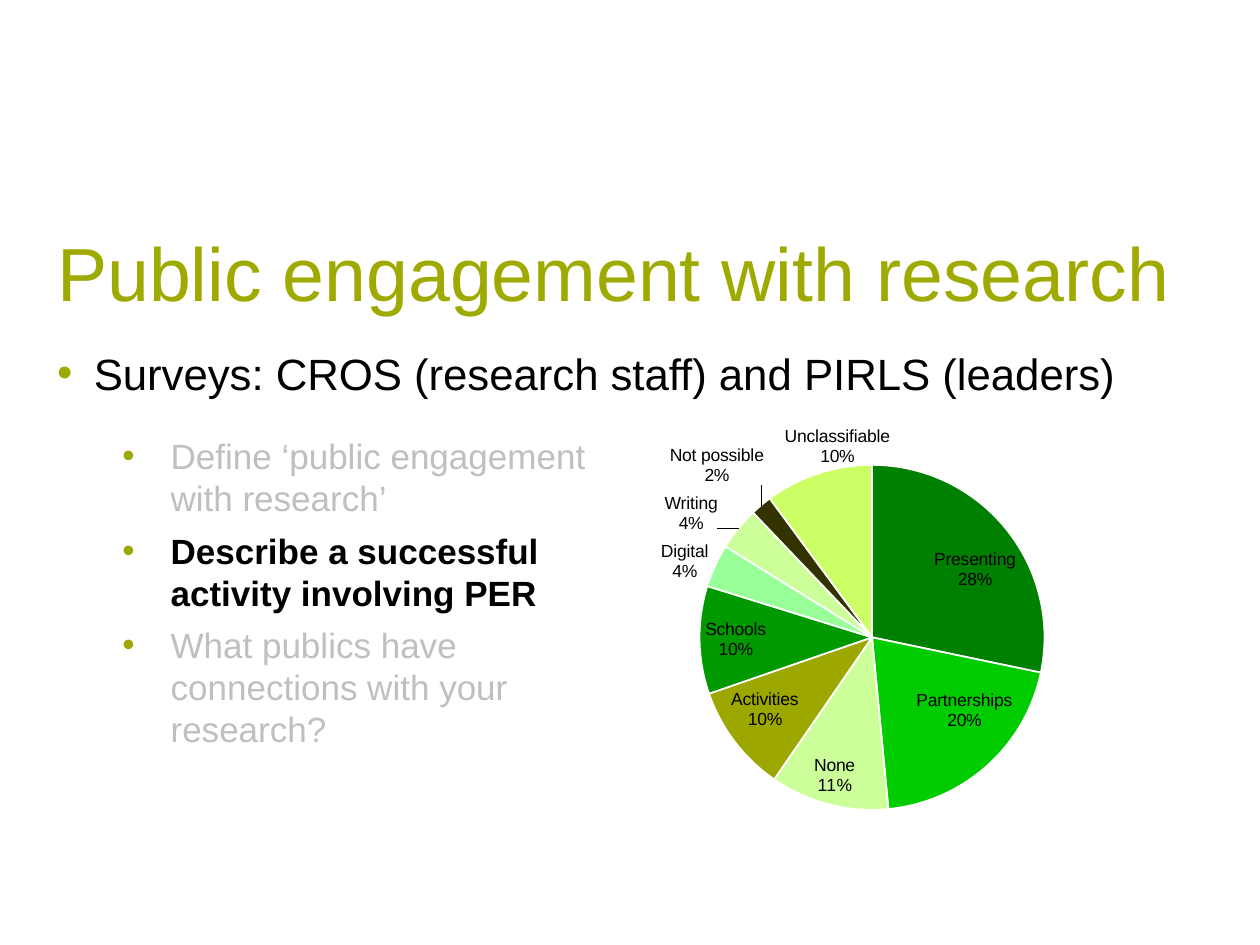
from lxml import etree
from pptx import Presentation
from pptx.chart.data import CategoryChartData
from pptx.dml.color import RGBColor
from pptx.enum.chart import XL_CHART_TYPE, XL_LABEL_POSITION
from pptx.enum.text import MSO_ANCHOR, MSO_AUTO_SIZE, PP_ALIGN
from pptx.oxml.ns import qn
from pptx.util import Cm, Pt

PIE = XL_CHART_TYPE.PIE
BEST_FIT = XL_LABEL_POSITION.BEST_FIT
OUTSIDE = XL_LABEL_POSITION.OUTSIDE_END
MIDDLE, TOP = MSO_ANCHOR.MIDDLE, MSO_ANCHOR.TOP
GROW = MSO_AUTO_SIZE.SHAPE_TO_FIT_TEXT
LEFT = PP_ALIGN.LEFT

FONT = "Arial"
OLIVE = RGBColor(0x9F, 0xAA, 0x00)
BULLET_OLIVE = RGBColor(0x9C, 0xA8, 0x00)
BLACK = RGBColor(0x00, 0x00, 0x00)
GREY = RGBColor(0xBF, 0xBF, 0xBF)
WHITE = RGBColor(0xFF, 0xFF, 0xFF)
FOREST = RGBColor(0x00, 0x80, 0x00)
GREEN = RGBColor(0x00, 0xCC, 0x00)
PALE_LIME = RGBColor(0xCC, 0xFF, 0x99)
LEAF = RGBColor(0x00, 0x99, 0x00)
MINT = RGBColor(0x99, 0xFF, 0x99)
DARK_OLIVE = RGBColor(0x33, 0x33, 0x00)
LIME = RGBColor(0xCC, 0xFF, 0x66)

PRACTICES = [
    ("Define ‘public engagement with research’", False),
    ("Describe a successful activity involving PER", True),
    ("What publics have connections with your research?", False),
]
ANSWERS = [
    ("Presenting", 28, FOREST, BEST_FIT),
    ("Partnerships", 20, GREEN, BEST_FIT),
    ("None", 11, PALE_LIME, BEST_FIT),
    ("Activities", 10, BULLET_OLIVE, BEST_FIT),
    ("Schools", 10, LEAF, BEST_FIT),
    ("Digital", 4, MINT, OUTSIDE),
    ("Writing", 4, PALE_LIME, OUTSIDE),
    ("Not possible", 2, DARK_OLIVE, OUTSIDE),
    ("Unclassifiable", 10, LIME, OUTSIDE),
]
LABEL_SHIFTS = {5: (0, 0.04), 6: (-0.02, 0.02), 7: (0.01, -0.03), 8: (0.1, 0)}


def place(shape, box):
    """Set the position and size of a shape."""
    shape.left, shape.top, shape.width, shape.height = box


def set_frame(frame, anchor):
    """Wrap the text, anchor it and let its shape grow."""
    frame.word_wrap = True
    frame.auto_size = GROW
    frame.vertical_anchor = anchor


def set_margins(frame):
    """Apply the narrow margins of the placeholders."""
    frame.margin_left = frame.margin_right = Cm(0.2)
    frame.margin_top = frame.margin_bottom = Cm(0.1)


def set_font(font, size, color, bold=False):
    """Format a font."""
    font.name, font.size, font.bold = FONT, Pt(size), bold
    font.color.rgb = color


def add_bullet(para, color, margin, hanging):
    """Give a paragraph a coloured round bullet and a hanging indent."""
    properties = para._p.get_or_add_pPr()
    properties.set("marL", str(margin))
    properties.set("indent", str(-hanging))
    bullet_color = etree.SubElement(properties, qn("a:buClr"))
    etree.SubElement(bullet_color, qn("a:srgbClr"), val=str(color))
    etree.SubElement(properties, qn("a:buFont"), typeface=FONT)
    etree.SubElement(properties, qn("a:buChar"), char="•")


def add_title(page, box):
    """Fill the title placeholder."""
    title = page.shapes.title
    place(title, box)
    frame = title.text_frame
    frame.text = "Public engagement with research"
    set_frame(frame, MIDDLE)
    set_margins(frame)
    para = frame.paragraphs[0]
    para.alignment = LEFT
    set_font(para.runs[0].font, 43, OLIVE)


def add_surveys(page, box):
    """Fill the body placeholder with the survey line."""
    body = page.placeholders[1]
    place(body, box)
    frame = body.text_frame
    frame.text = "Surveys: CROS (research staff) and PIRLS (leaders)"
    set_frame(frame, TOP)
    set_margins(frame)
    para = frame.paragraphs[0]
    para.space_before = Pt(0)
    add_bullet(para, OLIVE, Cm(0.74), Cm(0.74))
    set_font(para.runs[0].font, 25, BLACK)


def add_questions(page, box):
    """Add the list of survey questions with one emphasised."""
    frame = page.shapes.add_textbox(*box).text_frame
    set_frame(frame, TOP)
    for index, (question, current) in enumerate(PRACTICES):
        para = frame.add_paragraph() if index else frame.paragraphs[0]
        para.text = question
        para.level = 1
        para.space_after = Pt(6)
        add_bullet(para, BULLET_OLIVE, Cm(2.24), Cm(0.97))
        set_font(para.runs[0].font, 20, BLACK if current else GREY, current)


def add_layout(parent, index, values):
    """Insert a manual chart layout into a parent at a child index."""
    layout = etree.Element(qn("c:layout"))
    manual = etree.SubElement(layout, qn("c:manualLayout"))
    for name, value in values.items():
        etree.SubElement(manual, qn(f"c:{name}"), val=str(value))
    parent.insert(index, layout)


def finish_labels(chart):
    """Show name and percentage on each label and shift the crowded ones."""
    for index, label in enumerate(chart.element.iter(qn("c:dLbl"))):
        for name, value in (("Val", 0), ("CatName", 1), ("Percent", 1)):
            label.find(qn(f"c:show{name}")).set("val", str(value))
        separator = etree.SubElement(label, qn("c:separator"))
        separator.text = "\n"
        if index in LABEL_SHIFTS:
            across, down = LABEL_SHIFTS[index]
            add_layout(label, 1, {"x": across, "y": down})


def add_answers(page, box):
    """Add the pie chart of answers."""
    data = CategoryChartData()
    data.categories = [name for name, *_ in ANSWERS]
    data.add_series("Series 1", [value for _, value, *_ in ANSWERS])
    chart = page.shapes.add_chart(PIE, *box, data).chart
    chart.has_legend = chart.has_title = False
    set_font(chart.font, 10, BLACK)
    plot = chart.plots[0]
    plot.vary_by_categories = True
    series = plot.series[0]
    labels = series.data_labels
    labels.show_value = False
    labels.show_category_name = labels.show_percentage = True
    for index, (_, _, color, position) in enumerate(ANSWERS):
        point = series.points[index]
        point.format.fill.solid()
        point.format.fill.fore_color.rgb = color
        point.format.line.color.rgb = WHITE
        point.format.line.width = Pt(1)
        point.data_label.position = position
    finish_labels(chart)
    area = next(chart.element.iter(qn("c:plotArea")))
    for layout in area.findall(qn("c:layout")):
        area.remove(layout)
    add_layout(area, 0, {
        "layoutTarget": "inner", "xMode": "edge", "yMode": "edge",
        "x": 0.26, "y": 0.13, "w": 0.48, "h": 0.74,
    })


def main():
    """Build the deck and save it."""
    deck = Presentation()
    deck.slide_width, deck.slide_height = Cm(25.4), Cm(19.05)
    page = deck.slides.add_slide(deck.slide_layouts[1])
    left, width = Cm(0.95), Cm(22.86)
    add_title(page, (left, Cm(4.45), width, Cm(2.03)))
    add_surveys(page, (left, Cm(6.88), width, Cm(1.27)))
    add_questions(page, (left, Cm(8.64), Cm(11.84), Cm(6.68)))
    add_answers(page, (Cm(10.11), Cm(8.15), Cm(14.94), Cm(9.4)))
    deck.save("out.pptx")


if __name__ == "__main__":
    main()
